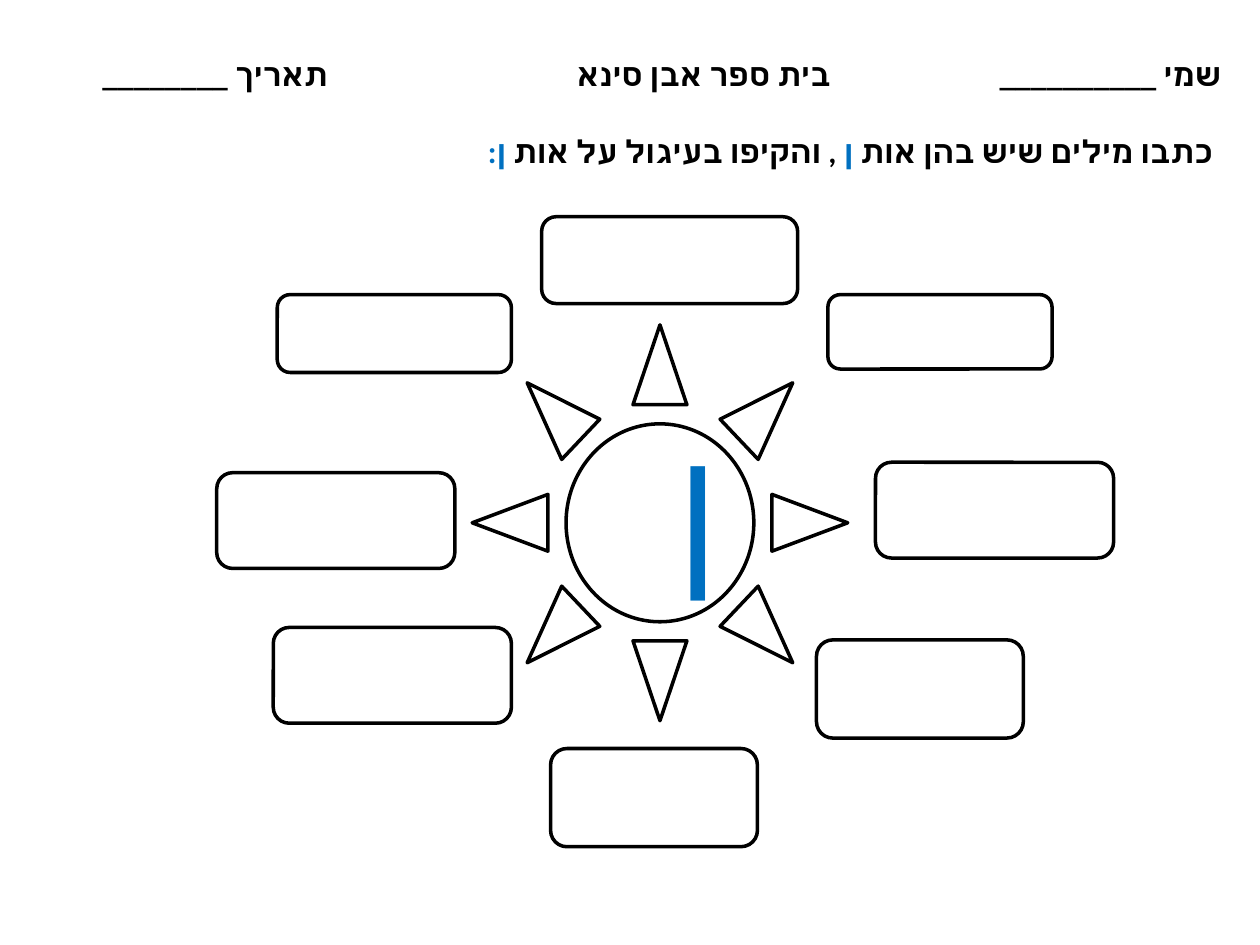
from lxml import etree
from pptx import Presentation
from pptx import util as u
from pptx.dml.color import RGBColor
from pptx.enum import shapes, text
from pptx.oxml.ns import qn

BLACK = RGBColor(0x00, 0x00, 0x00)
WHITE = RGBColor(0xFF, 0xFF, 0xFF)
BLUE = RGBColor(0x00, 0x70, 0xC0)

HEADER = [
    (17.3, 7.57, "שמי __________"),
    (9.5, 7.5, "בית ספר אבן סינא"),
    (0.58, 6.28, "תאריך ________"),
]
INSTRUCTION = [
    ("כתבו מילים שיש בהן אות ", BLACK),
    ("ן", BLUE),
    (" , והקיפו בעיגול על אות ", BLACK),
    ("ן:", BLUE),
]
WORD_BOXES = [
    (10.92, 4.37, 5.16, 1.75),
    (16.69, 5.94, 4.52, 1.5),
    (17.65, 9.32, 4.8, 1.93),
    (16.46, 12.9, 4.17, 1.98),
    (11.1, 15.09, 4.17, 1.98),
    (5.51, 12.65, 4.8, 1.93),
    (4.37, 9.53, 4.8, 1.93),
    (5.59, 5.94, 4.72, 1.57),
]


class Worksheet:
    font = "Calibri"
    size = 18
    line_width = 2

    def __init__(self, prs):
        self.s = prs.slides.add_slide(prs.slide_layouts[5])

    def fill_text(self, sp, runs, size, bold):
        tf = sp.text_frame
        tf.word_wrap = True
        tf.auto_size = text.MSO_AUTO_SIZE.NONE
        tf.vertical_anchor = text.MSO_ANCHOR.TOP
        p = tf.paragraphs[0]
        p.alignment = text.PP_ALIGN.RIGHT
        p._p.get_or_add_pPr().set("rtl", "1")
        for words, color in runs:
            r = p.add_run()
            r.text = words
            r.font.name = self.font
            r.font.size = u.Pt(size)
            r.font.bold = bold
            r.font.color.rgb = color
            etree.SubElement(r._r.get_or_add_rPr(), qn("a:cs"), typeface=self.font)

    def title(self, box, runs):
        sp = self.s.shapes.title
        sp.left, sp.top, sp.width, sp.height = map(u.Cm, box)
        self.fill_text(sp, runs, self.size, True)

    def label(self, box, words, color=BLACK, size=size, bold=True):
        sp = self.s.shapes.add_textbox(*map(u.Cm, box))
        self.fill_text(sp, [(words, color)], size, bold)

    def outline(self, kind, box):
        sp = self.s.shapes.add_shape(kind, *map(u.Cm, box))
        sp.shadow.inherit = False
        sp.fill.solid()
        sp.fill.fore_color.rgb = WHITE
        sp.line.color.rgb = BLACK
        sp.line.width = u.Pt(self.line_width)


def main():
    prs = Presentation()
    prs.slide_width, prs.slide_height = u.Cm(25.4), u.Cm(19.05)
    sheet = Worksheet(prs)
    sheet.outline(shapes.MSO_SHAPE.SUN, (9.52, 6.55, 7.57, 7.98))
    sheet.label((11.91, 7.92, 2.79, 4.37), "ן", BLUE, 96, False)
    for box in WORD_BOXES:
        sheet.outline(shapes.MSO_SHAPE.ROUNDED_RECTANGLE, box)
    for left, width, words in HEADER:
        sheet.label((left, 0.99, width, 1.03), words)
    sheet.title((0.58, 2.53, 24.13, 1.03), INSTRUCTION)
    prs.save("out.pptx")


if __name__ == "__main__":
    main()
